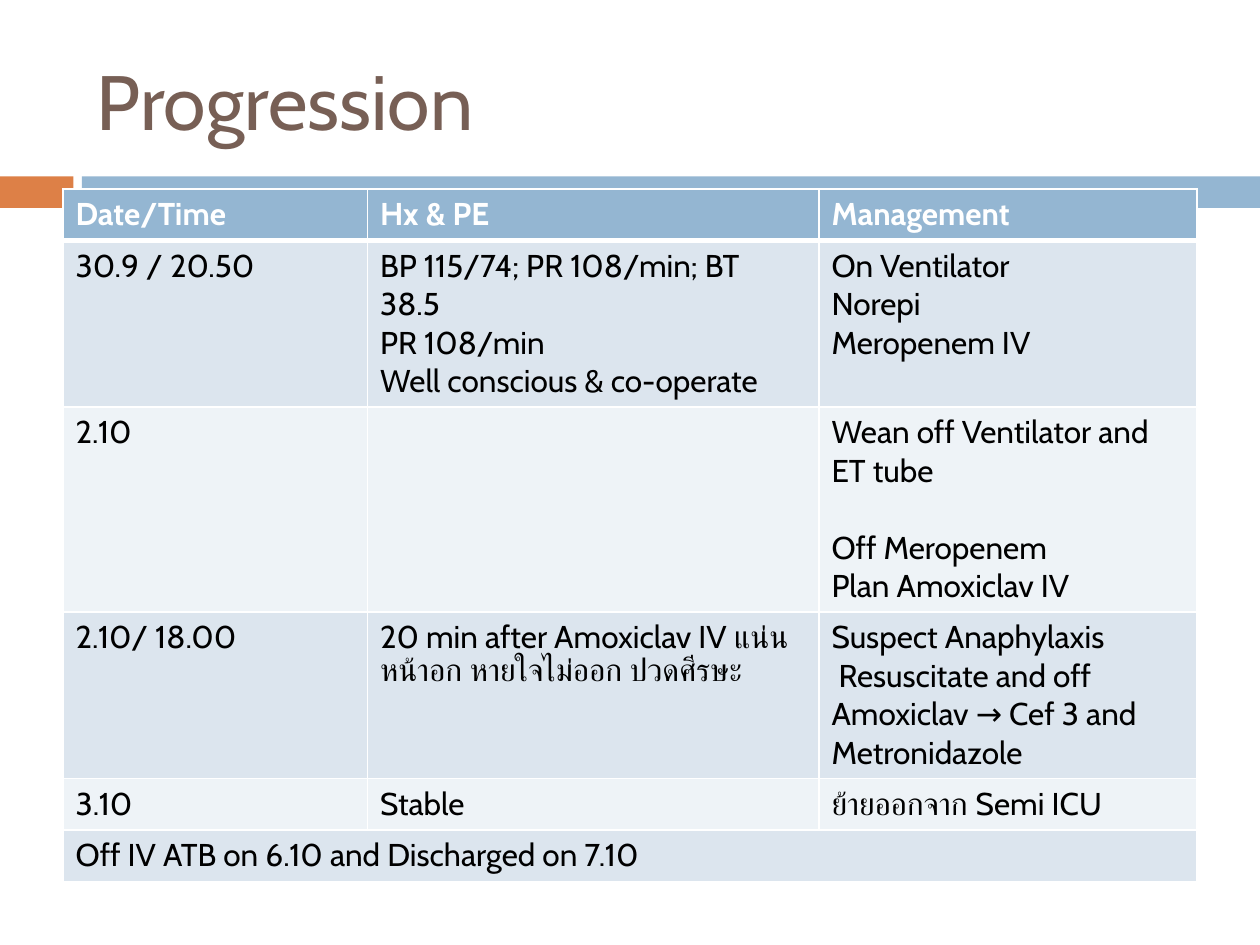
import pptx
import pptx.dml.color
import pptx.enum.shapes
import pptx.enum.text
import pptx.oxml
import pptx.oxml.ns
import pptx.util

COLORS = {"title": "775F55", "accent": "DD8047", "header": "94B6D2", "odd": "DCE5EE",
          "even": "EEF3F7", "text": "000000", "white": "FFFFFF"}
COLUMNS = [29, 43, 36]
ROW_HEIGHT = 4.92
GAP = "gap"  # leaves one line free above the next paragraph

ROWS = [
    [["Date/Time"], ["Hx & PE"], ["Management"]],
    [["30.9 / 20.50"],
     ["BP 115/74; PR 108/min; BT 38.5", "PR 108/min", "Well conscious & co-operate"],
     ["On Ventilator", "Norepi", "Meropenem IV"]],
    [["2.10"], [],
     ["Wean off Ventilator and ET tube", GAP, "Off Meropenem", "Plan Amoxiclav IV"]],
    [["2.10/ 18.00"],
     ["20 min after Amoxiclav IV แน่นหน้าอก หายใจไม่ออก ปวดศีรษะ"],
     ["Suspect Anaphylaxis", " Resuscitate and off Amoxiclav → Cef 3 and Metronidazole"]],
    [["3.10"], ["Stable"], ["ย้ายออกจาก Semi ICU"]],
    [["Off IV ATB on 6.10 and Discharged on 7.10"], [], []],
]


def rgb(name):
    return pptx.dml.color.RGBColor.from_string(COLORS[name])


class SlideBuilder:
    """Holds the style and the slide; lengths are units of a 120 by 90 grid."""

    font = "Cabin"

    def __init__(self, prs):
        self.unit = prs.slide_width / 120
        self.s = prs.slides.add_slide(prs.slide_layouts[5])

    def grid(self, *lengths):
        return [round(n * self.unit) for n in lengths]

    def add_text(self, p, text, color, size, bold=False):
        r = p.add_run()
        r.text = text
        formats = {"name": self.font, "size": pptx.util.Pt(size), "bold": bold}
        for key, value in formats.items():
            setattr(r.font, key, value)
        r.font.color.rgb = rgb(color)

    def title(self, text, *box):
        sp = self.s.shapes.title
        for key, value in zip(("left", "top", "width", "height"), self.grid(*box)):
            setattr(sp, key, value)
        tf = sp.text_frame
        tf.vertical_anchor = pptx.enum.text.MSO_ANCHOR.MIDDLE
        p = tf.paragraphs[0]
        p.alignment = pptx.enum.text.PP_ALIGN.LEFT
        self.add_text(p, text, "title", 44)

    def bar(self, color, *box):
        sp = self.s.shapes.add_shape(pptx.enum.shapes.MSO_SHAPE.RECTANGLE, *self.grid(*box))
        sp.shadow.inherit = False
        sp.fill.solid()
        sp.fill.fore_color.rgb = rgb(color)
        sp.line.fill.background()

    def borders(self, cell, **widths):
        tc_pr = cell._tc.get_or_add_tcPr()
        for side in "LRTB":
            width = pptx.util.Pt(widths.get(side, 1))
            tc_pr.append(pptx.oxml.parse_xml(
                f'<a:ln{side} {pptx.oxml.ns.nsdecls("a")} w="{width}"><a:solidFill>'
                f'<a:srgbClr val="{COLORS["white"]}"/></a:solidFill></a:ln{side}>'))

    def cell(self, cell, lines, row):
        header = row == 0
        self.borders(cell, **{0: {"B": 3}, 1: {"T": 3}}.get(row, {}))
        cell.fill.solid()
        cell.fill.fore_color.rgb = rgb("header" if header else "odd" if row % 2 else "even")
        tf = cell.text_frame
        tf.paragraphs[0].font.size = pptx.util.Pt(18)
        p, gap = tf.paragraphs[0], False
        for line in lines:
            if line == GAP:
                gap = True
                continue
            if p.runs:
                p = tf.add_paragraph()
            if gap:
                p.space_before, gap = pptx.util.Pt(22), False
            self.add_text(p, line, "white" if header else "text", 18, header)

    def table(self, rows, left, top):
        box = self.grid(left, top, sum(COLUMNS), ROW_HEIGHT * len(rows))
        table = self.s.shapes.add_table(len(rows), len(COLUMNS), *box).table
        for column, width in zip(table.columns, self.grid(*COLUMNS)):
            column.width = width
        for i, row in enumerate(rows):
            for j, lines in enumerate(row):
                self.cell(table.cell(i, j), lines, i)
        last = len(rows) - 1
        table.cell(last, 0).merge(table.cell(last, len(COLUMNS) - 1))


def main():
    prs = pptx.Presentation()
    prs.slide_width, prs.slide_height = pptx.util.Inches(10), pptx.util.Inches(7.5)
    slide = SlideBuilder(prs)
    slide.bar("accent", 0, 16.8, 7, 3)
    slide.bar("header", 7.8, 16.8, 112.2, 3)
    slide.title("Progression", 8, 3, 107, 13)
    slide.table(ROWS, 6, 18)
    prs.save("out.pptx")


if __name__ == "__main__":
    main()
